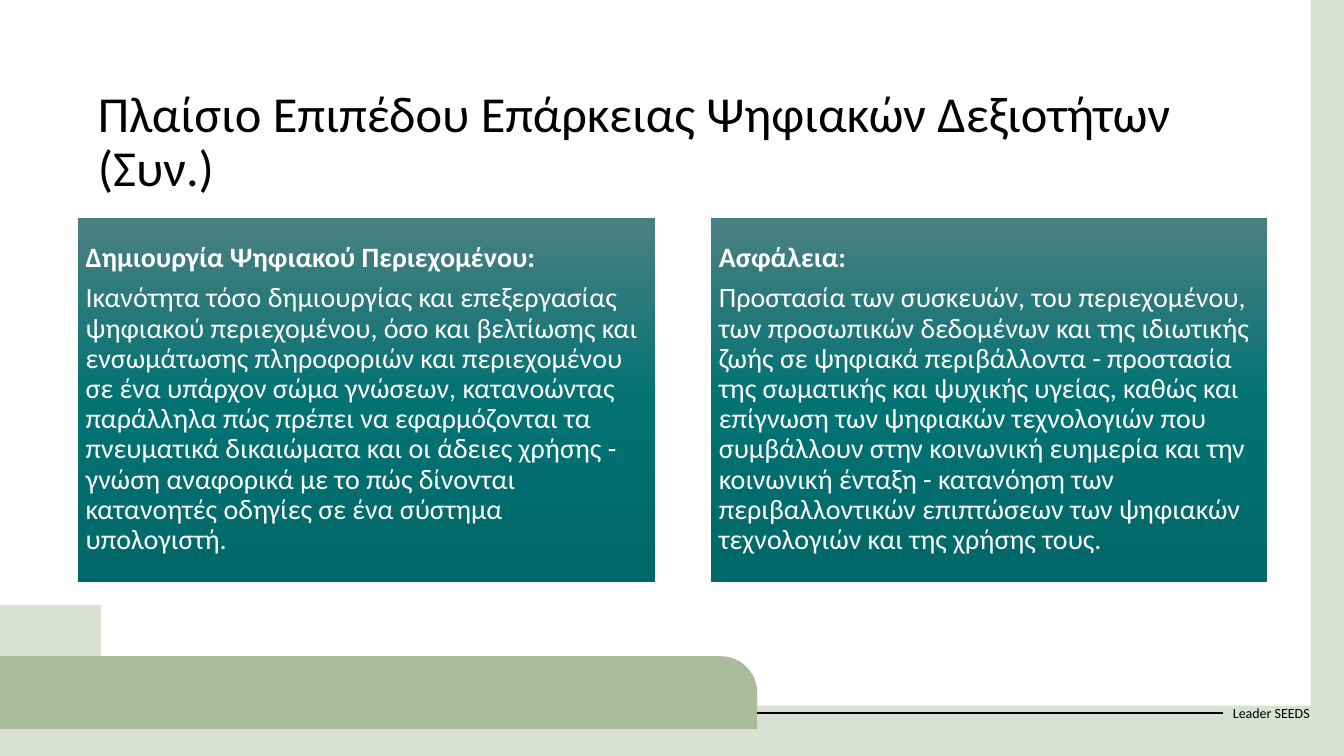
"""Build the slide on digital skills with two gradient cards."""
from copy import deepcopy
from math import cos, pi, sin
from lxml.etree import SubElement
from pptx import Presentation
from pptx.dml.color import RGBColor
from pptx.enum.shapes import MSO_CONNECTOR, MSO_SHAPE
from pptx.enum.text import MSO_ANCHOR, MSO_AUTO_SIZE, PP_ALIGN
from pptx.oxml.ns import qn
from pptx.util import Inches, Pt

TITLE = "Πλαίσιο Επιπέδου Επάρκειας Ψηφιακών Δεξιοτήτων (Συν.)"
CARDS = [
    (0.77, 5.73, "Δημιουργία Ψηφιακού Περιεχομένου:",
     "Ικανότητα τόσο δημιουργίας και επεξεργασίας ψηφιακού περιεχομένου, "
     "όσο και βελτίωσης και ενσωμάτωσης πληροφοριών και περιεχομένου σε ένα "
     "υπάρχον σώμα γνώσεων, κατανοώντας παράλληλα πώς πρέπει να εφαρμόζονται "
     "τα πνευματικά δικαιώματα και οι άδειες χρήσης - γνώση αναφορικά με το "
     "πώς δίνονται κατανοητές οδηγίες σε ένα σύστημα υπολογιστή."),
    (7.05, 5.52, "Ασφάλεια:",
     "Προστασία των συσκευών, του περιεχομένου, των προσωπικών δεδομένων και "
     "της ιδιωτικής ζωής σε ψηφιακά περιβάλλοντα - προστασία της σωματικής "
     "και ψυχικής υγείας, καθώς και επίγνωση των ψηφιακών τεχνολογιών που "
     "συμβάλλουν στην κοινωνική ευημερία και την κοινωνική ένταξη - "
     "κατανόηση των περιβαλλοντικών επιπτώσεων των ψηφιακών τεχνολογιών και "
     "της χρήσης τους."),
]
FOOT = "Leader SEEDS"
TEAL = [(0, "4B8081"), (0.5, "037273"), (1, "006869")]
WIDE, HIGH = 13.33, 7.5
LEFT, TOP, RIGHT, BASE = 0.35, 0.37, 13.01, 6.87
TOP_ARC, LOW_ARC = (0.81, 0.71), (1.7, 1.49)
STEPS = 32


def color(code):
    return RGBColor.from_string(code)


def box(*sides):
    return [Inches(side) for side in sides]


def paint(shape, code):
    shape.shadow.inherit = False
    shape.fill.solid()
    shape.fill.fore_color.rgb = color(code)
    shape.line.fill.background()


def shade(shape, stops):
    paint(shape, stops[0][1])
    shape.fill.gradient()
    shape.fill.gradient_angle = 270
    group = shape._element.spPr.find(qn("a:gradFill")).find(qn("a:gsLst"))
    while len(group) < len(stops):
        group.append(deepcopy(group[-1]))
    for stop, (place, code) in zip(shape.fill.gradient_stops, stops):
        stop.position = place
        stop.color.rgb = color(code)


def write(shape, lines, size, code, anchor, inset=(0.1, 0.05), **form):
    frame = shape.text_frame
    frame.text = "\n".join(lines)
    side, edge = box(*inset)
    setup = {"word_wrap": True, "auto_size": MSO_AUTO_SIZE.NONE,
             "vertical_anchor": anchor, "margin_left": side,
             "margin_right": side, "margin_top": edge, "margin_bottom": edge}
    for name, value in setup.items():
        setattr(frame, name, value)
    style = {"alignment": PP_ALIGN.LEFT, **form}
    face = {"name": "Calibri", "size": Pt(size), "bold": False}
    for para in frame.paragraphs:
        for name, value in style.items():
            setattr(para, name, value)
        for name, value in face.items():
            setattr(para.font, name, value)
        para.font.color.rgb = color(code)
    return frame


def arc(mid, radii, start):
    turns = [start + pi / 2 * step / STEPS for step in range(STEPS + 1)]
    return [(mid[0] + radii[0] * cos(turn), mid[1] + radii[1] * sin(turn))
            for turn in turns]


def panel(slide):
    high = arc((RIGHT - TOP_ARC[0], TOP + TOP_ARC[1]), TOP_ARC, -pi / 2)
    low = arc((LEFT + LOW_ARC[0], BASE - LOW_ARC[1]), LOW_ARC, pi / 2)
    points = [(LEFT, TOP), *high, (RIGHT, BASE), *low]
    pen = slide.shapes.build_freeform(*points[0], scale=Inches(1))
    pen.add_line_segments(points[1:], close=True)
    paint(pen.convert_to_shape(), "FFFFFF")


def footer(slide):
    note = slide.shapes.add_textbox(*box(12.13, 6.87, 1.01, 0.4))
    write(note, [FOOT], 10, "000000", MSO_ANCHOR.MIDDLE)
    rule = slide.shapes.add_connector(
        MSO_CONNECTOR.STRAIGHT, *box(0, 7.07, 12.13, 7.07))
    rule.line.color.rgb = color("000000")
    rule.line.width = Pt(1.5)
    SubElement(rule._element.spPr, qn("a:effectLst"))
    tab = slide.shapes.add_shape(
        MSO_SHAPE.ROUND_1_RECTANGLE, *box(0, 6.51, 7.51, 0.72))
    tab.adjustments[0] = 0.5
    paint(tab, "AABC99")


def heading(slide):
    title = slide.shapes.title
    title.left, title.top, title.width, title.height = box(
        0.87, 0.83, 11.59, 0.88)
    write(title, [TITLE], 36, "000000", MSO_ANCHOR.TOP, line_spacing=0.9)


def card(slide, left, width, head, body):
    shape = slide.shapes.add_shape(
        MSO_SHAPE.RECTANGLE, *box(left, 2.16, width, 3.61))
    shade(shape, TEAL)
    frame = write(shape, [head, body], 20, "FFFFFF", MSO_ANCHOR.MIDDLE,
                  (0.08, 0.08), line_spacing=0.9, space_after=Pt(7))
    frame.paragraphs[0].font.bold = True


def main():
    deck = Presentation()
    deck.slide_width, deck.slide_height = box(WIDE, HIGH)
    slide = deck.slides.add_slide(deck.slide_layouts[5])
    back = slide.background.fill
    back.solid()
    back.fore_color.rgb = color("DAE0D2")
    panel(slide)
    footer(slide)
    heading(slide)
    slide.shapes._spTree.append(slide.shapes.title._element)
    for item in CARDS:
        card(slide, *item)
    deck.save("out.pptx")


if __name__ == "__main__":
    main()
